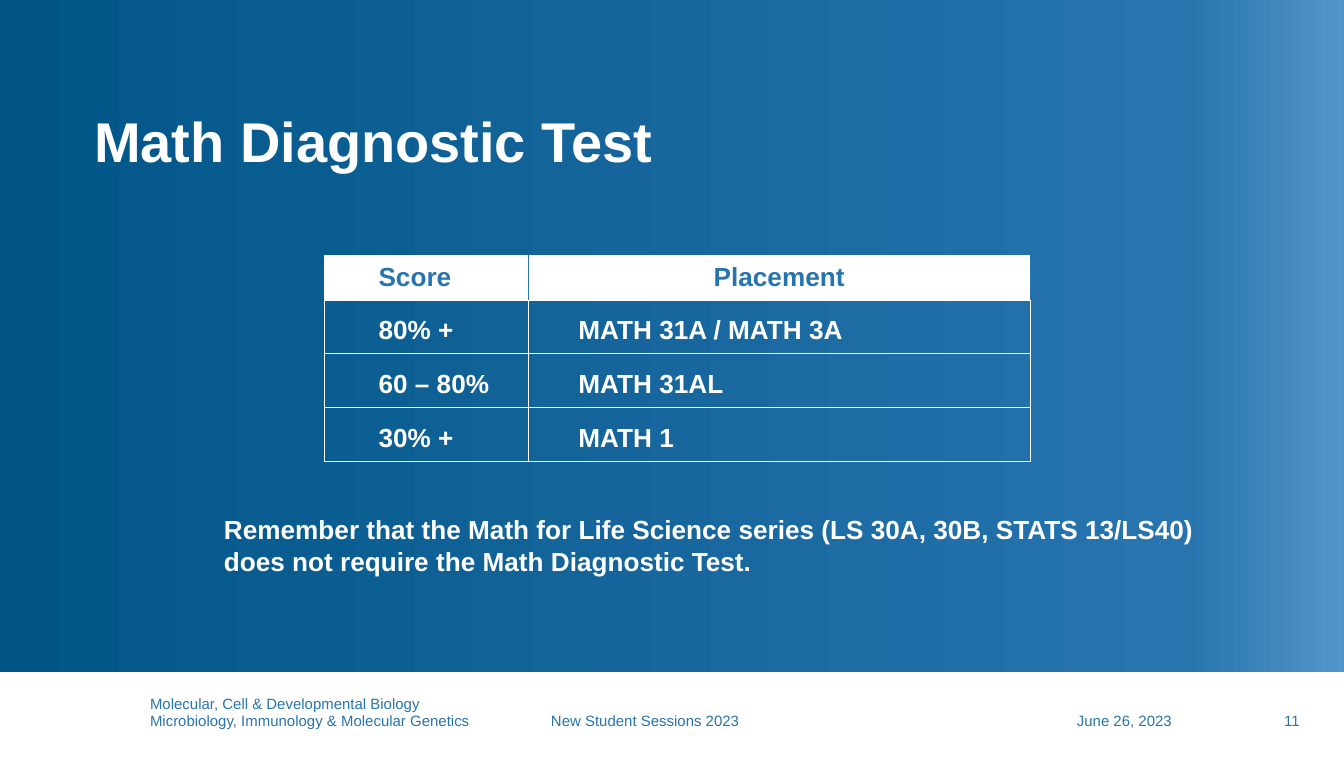
from copy import deepcopy

from lxml import etree
from pptx import Presentation
from pptx.dml.color import RGBColor
from pptx.enum.shapes import MSO_SHAPE
from pptx.enum.text import MSO_ANCHOR, MSO_AUTO_SIZE, PP_ALIGN
from pptx.oxml.ns import qn
from pptx.util import Pt

RECTANGLE = MSO_SHAPE.RECTANGLE
TOP, MIDDLE, BOTTOM = MSO_ANCHOR.TOP, MSO_ANCHOR.MIDDLE, MSO_ANCHOR.BOTTOM
LEFT, CENTER, RIGHT = PP_ALIGN.LEFT, PP_ALIGN.CENTER, PP_ALIGN.RIGHT
NO_AUTO_SIZE = MSO_AUTO_SIZE.NONE

COLORS = {"navy": "005587", "blue": "2774AE", "sky": "5295C9", "white": "FFFFFF"}
FONT = "Arial"
SLIDE_WIDTH, SLIDE_HEIGHT = 720, 405.36


def rgb(name):
    """Return the named colour."""
    return RGBColor.from_string(COLORS[name])


def set_margins(target, left, top, right, bottom):
    """Set the inner margins of a text frame or cell, in points."""
    target.margin_left, target.margin_top = Pt(left), Pt(top)
    target.margin_right, target.margin_bottom = Pt(right), Pt(bottom)


def write(frame, lines, size, color, bold=False, align=LEFT):
    """Fill a text frame with one paragraph for each line."""
    frame.text = "\n".join(lines)
    for paragraph in frame.paragraphs:
        paragraph.alignment = align
        font = paragraph.font
        font.name, font.size, font.bold = FONT, Pt(size), bold
        font.color.rgb = rgb(color)


def add_text(slide, box, lines, size, color, margins, anchor=TOP, **style):
    """Add a wrapping text box."""
    frame = slide.shapes.add_textbox(*map(Pt, box)).text_frame
    frame.word_wrap, frame.auto_size = True, NO_AUTO_SIZE
    frame.vertical_anchor = anchor
    set_margins(frame, *margins)
    write(frame, lines, size, color, **style)


def set_background(slide):
    """Give the slide a three-stop horizontal gradient."""
    fill = slide.background.fill
    fill.gradient()
    fill.gradient_angle = 0
    stop_list = slide.element.find(".//" + qn("a:gsLst"))
    stop_list.append(deepcopy(stop_list[-1]))
    stops = (("navy", 0), ("blue", 0.88), ("sky", 1))
    for stop, (color, position) in zip(fill.gradient_stops, stops):
        stop.color.rgb, stop.position = rgb(color), position


def add_footer(slide, box):
    """Add the white band with departments, event, date and page number."""
    left, top, width, height = box
    band = slide.shapes.add_shape(RECTANGLE, *map(Pt, box))
    band.shadow.inherit = False
    band.fill.solid()
    band.fill.fore_color.rgb = rgb("white")
    band.line.fill.background()

    departments = ["Molecular, Cell & Developmental Biology",
                   "Microbiology, Immunology & Molecular Genetics"]
    items = (
        (80.4, 208.8, 20, departments, 0, LEFT),
        (295.2, 230.4, 11, ["New Student Sessions 2023"], 0, LEFT),
        (527, 108, 11, ["June 26, 2023"], 7.2, RIGHT),
        (640.8, 62.6, 11, ["11"], 7.2, RIGHT),
    )
    bottom = top + 31.6
    for offset, item_width, item_height, lines, inset, align in items:
        item_box = (left + offset, bottom - item_height, item_width, item_height)
        add_text(slide, item_box, lines, 8, "blue", (inset, 0.7, 7.2, 0.7),
                 BOTTOM, align=align)


def set_title(slide, box, text):
    """Place and format the title placeholder."""
    title = slide.shapes.title
    title.left, title.top, title.width, title.height = map(Pt, box)
    frame = title.text_frame
    frame.auto_size, frame.vertical_anchor = NO_AUTO_SIZE, MIDDLE
    set_margins(frame, 7.2, 3.6, 7.2, 3.6)
    write(frame, [text], 30, "white", bold=True)
    frame.paragraphs[0].line_spacing = 0.9


def set_borders(cell, colors):
    """Draw half-point borders in the order left, right, top, bottom."""
    properties = cell._tc.get_or_add_tcPr()
    for index, (side, color) in enumerate(zip("LRTB", colors)):
        line = etree.Element(qn(f"a:ln{side}"), w=str(Pt(0.5)))
        fill = etree.SubElement(line, qn("a:solidFill"))
        etree.SubElement(fill, qn("a:srgbClr"), val=COLORS[color])
        properties.insert(index, line)


def add_score_table(slide, box):
    """Add the table that maps scores to placements."""
    rows = (
        ("Score", "Placement"),
        ("80% +", "MATH 31A / MATH 3A"),
        ("60 – 80%", "MATH 31AL"),
        ("30% +", "MATH 1"),
    )
    left, top, width, height = box
    score_width, header_height = 108.9, 23.9
    row_height = (height - header_height) / (len(rows) - 1)
    table = slide.shapes.add_table(len(rows), 2, *map(Pt, box)).table
    table.first_row = table.horz_banding = False
    table.columns[0].width = Pt(score_width)
    table.columns[1].width = Pt(width - score_width)

    for row_index, texts in enumerate(rows):
        header = row_index == 0
        table.rows[row_index].height = Pt(header_height if header else row_height)
        for column_index, text in enumerate(texts):
            cell = table.cell(row_index, column_index)
            score = column_index == 0
            cell.vertical_anchor = MIDDLE
            set_margins(cell, 28.8 if score else 0, 0 if header else 3.6, 0, 0)
            if header:
                cell.fill.solid()
                cell.fill.fore_color.rgb = rgb("white")
            else:
                cell.fill.background()
            write(cell.text_frame, [text], 14, "blue" if header else "white",
                  bold=True, align=CENTER if header and not score else LEFT)
            if not header and not score:
                paragraph = cell.text_frame.paragraphs[0]
                paragraph.level = 1
                paragraph._p.get_or_add_pPr().set("marL", str(Pt(27)))
            inner = "blue" if header else "white"
            set_borders(cell, ("white" if score else inner, inner, "white", "white"))


def add_reminder(slide, box):
    """Add the note below the table."""
    text = ("Remember that the Math for Life Science series (LS 30A, 30B, "
            "STATS 13/LS40) does not require the Math Diagnostic Test.")
    add_text(slide, box, [text], 14, "white", (36, 0, 0, 0), bold=True)


def main():
    """Build and save the presentation."""
    presentation = Presentation()
    presentation.slide_width = Pt(SLIDE_WIDTH)
    presentation.slide_height = Pt(SLIDE_HEIGHT)
    slide = presentation.slides.add_slide(presentation.slide_layouts[5])
    set_background(slide)
    add_footer(slide, (0, 360, SLIDE_WIDTH, SLIDE_HEIGHT - 360))
    set_title(slide, (43.2, 57.3, 576, 40.3), "Math Diagnostic Test")
    add_score_table(slide, (174, 136.8, 378, 110.3))
    add_reminder(slide, (84, 275, 573, 33.8))
    presentation.save("out.pptx")


if __name__ == "__main__":
    main()
